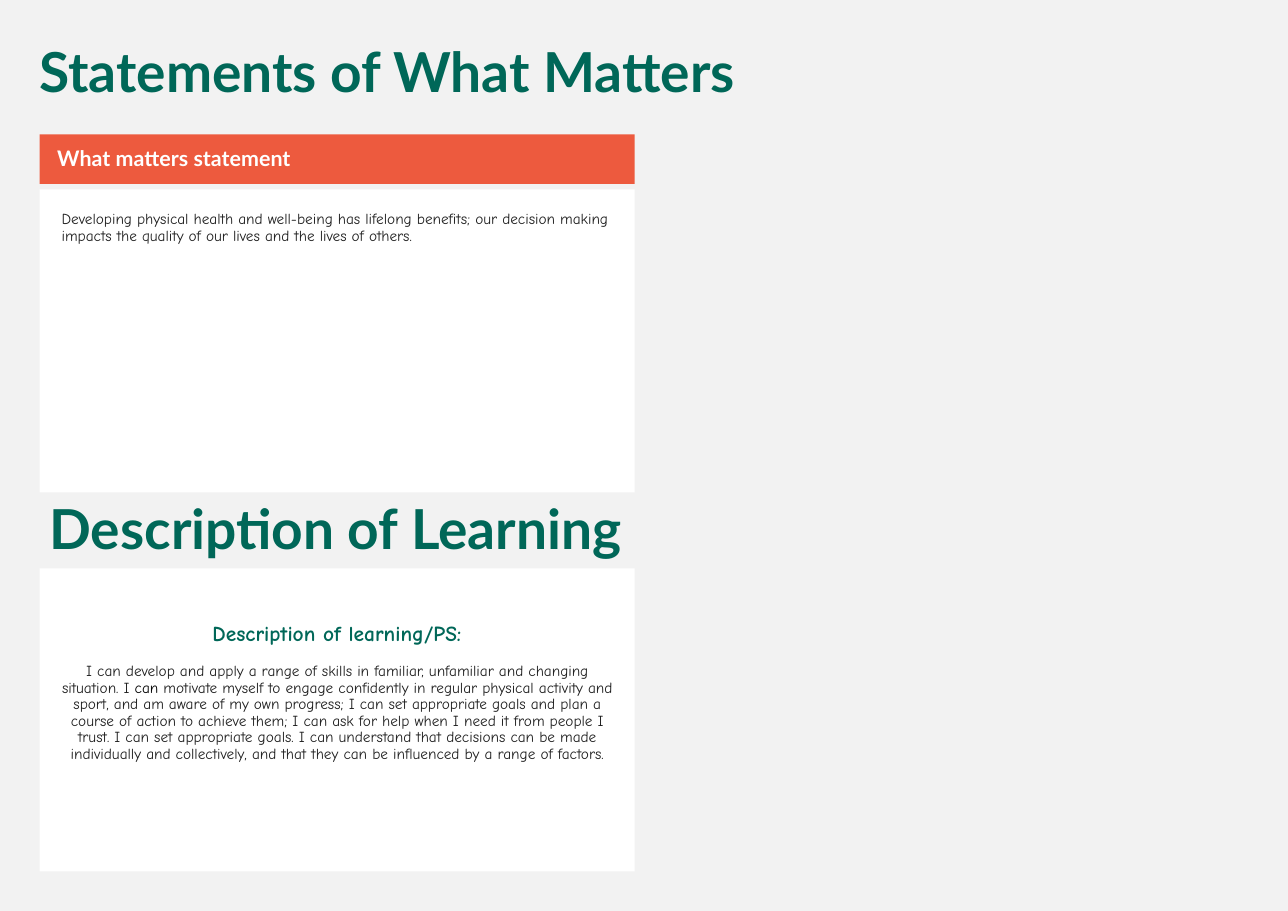
from pptx import Presentation
from pptx.dml.color import RGBColor
from pptx.enum.shapes import MSO_SHAPE
from pptx.enum.text import MSO_ANCHOR, PP_ALIGN
from pptx.util import Pt

RECT = MSO_SHAPE.RECTANGLE
TOP, MIDDLE = MSO_ANCHOR.TOP, MSO_ANCHOR.MIDDLE
LEFT, CENTER = PP_ALIGN.LEFT, PP_ALIGN.CENTER

PX = 9144  # 100 px to the inch
GREEN, ORANGE, WHITE = "006758", "ED5A3E", "FFFFFF"
GREY, INK, BLACK = "F2F2F2", "1F1F1F", "000000"
HEAD_FONT, BODY_FONT = "Lato", "Comic Neue"


def px(n):
    return int(n * PX)


def rgb(color):
    return RGBColor.from_string(color)


class Page:
    """Holds the slide and the style shared by its elements."""

    line_spacing = 0.9
    space_before = Pt(11)

    def __init__(self, prs):
        self.s = prs.slides.add_slide(prs.slide_layouts[6])
        self.s.background.fill.solid()
        self.s.background.fill.fore_color.rgb = rgb(GREY)

    def frame(self, sp, insets, anchor=TOP):
        tf = sp.text_frame
        tf.word_wrap = True
        tf.vertical_anchor = anchor
        tf.margin_left, tf.margin_top, tf.margin_right, tf.margin_bottom = map(px, insets)
        return tf

    def paragraph(self, p, runs, size, font, bold=False, align=LEFT):
        p.alignment = align
        p.line_spacing = self.line_spacing
        p.space_before = self.space_before
        for text, color in runs:
            r = p.add_run()
            r.text = text
            r.font.size = Pt(size)
            r.font.name = font
            r.font.bold = bold
            r.font.color.rgb = rgb(color)

    def panel(self, x, y, w, h, fill, insets, anchor=TOP):
        sp = self.s.shapes.add_shape(RECT, px(x), px(y), px(w), px(h))
        sp.shadow.inherit = False
        sp.fill.solid()
        sp.fill.fore_color.rgb = rgb(fill)
        sp.line.fill.background()
        return self.frame(sp, insets, anchor)

    def title(self, x, y, text):
        sp = self.s.shapes.add_textbox(px(x), px(y), px(1108), px(65))
        tf = self.frame(sp, (10, 5, 10, 5))
        self.paragraph(tf.paragraphs[0], [(text, GREEN)], 36, HEAD_FONT, bold=True)


def main():
    prs = Presentation()
    prs.slide_width, prs.slide_height = px(1169), px(827)
    page = Page(prs)
    left, width, height = 36, 540, 275

    # What matters: statement panel and its orange header
    tf = page.panel(left, 172, width, height, WHITE, (20, 20, 20, 20))
    statement = ("Developing physical health and well-being has lifelong benefits; "
                 "our decision making impacts the quality of our lives and the lives of others.")
    page.paragraph(tf.paragraphs[0], [(statement, INK)], 10, BODY_FONT)

    tf = page.panel(left, 122, width, 45, ORANGE, (16, 5, 10, 5), MIDDLE)
    page.paragraph(tf.paragraphs[0], [("What matters statement", WHITE)], 14, HEAD_FONT,
                   bold=True)

    # Description of learning: the deeper top inset lowers the heading
    tf = page.panel(left, 516, width, height, WHITE, (20, 50, 20, 20))
    page.paragraph(tf.paragraphs[0], [("Description of learning/PS:", GREEN)], 14, BODY_FONT,
                   bold=True, align=CENTER)
    description = [
        ("I can develop and apply a range of skills in familiar, unfamiliar and "
         "changing situation. I", INK),
        (" can ", BLACK),
        ("motivate myself to engage confidently in regular physical activity and sport, "
         "and am aware of my own progress; I can set appropriate goals and plan a course "
         "of action to achieve them; I can ask for help when I need it from people I trust. "
         "I can set appropriate goals. I can understand that decisions can be made "
         "individually and collectively, and that they can be influenced by a range of "
         "factors.", INK),
    ]
    page.paragraph(tf.add_paragraph(), description, 10, BODY_FONT, align=CENTER)

    # Titles
    page.title(26, 36, "Statements of What Matters")
    page.title(35, 451, "Description of Learning")

    prs.save("out.pptx")


if __name__ == "__main__":
    main()
